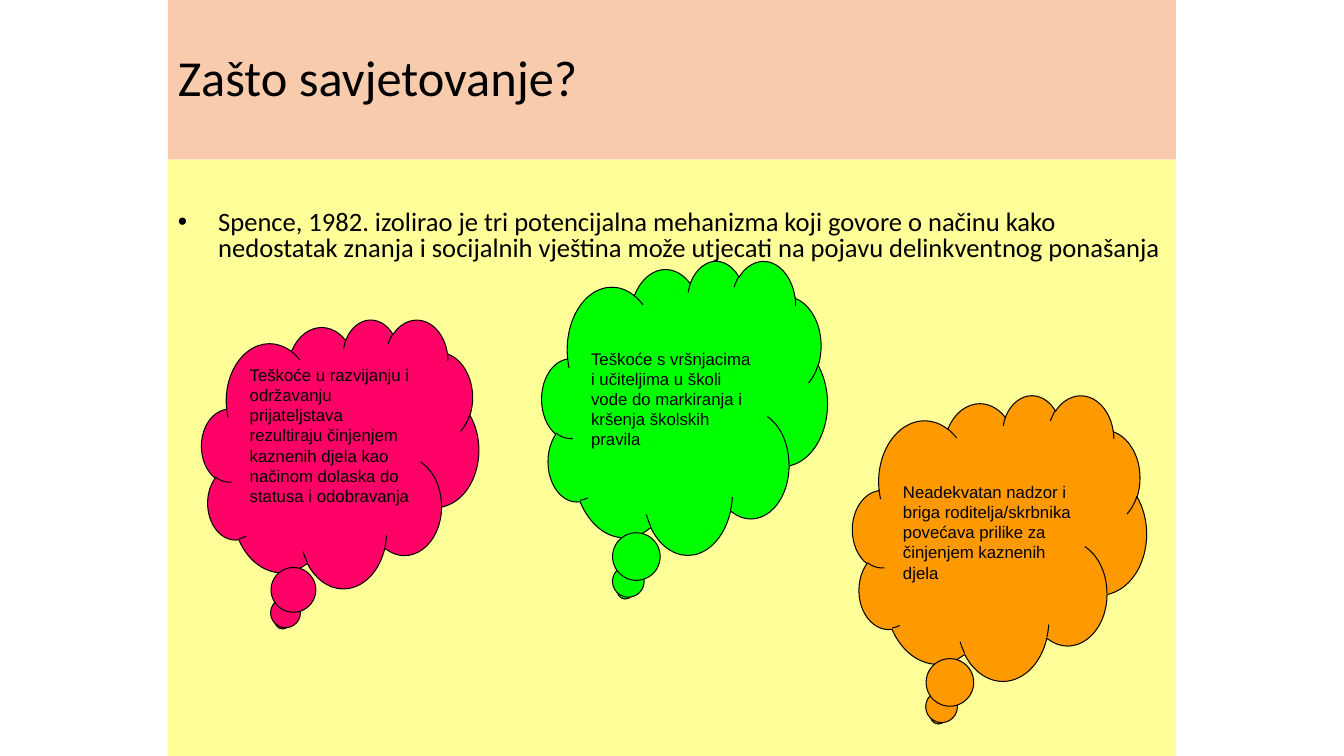
from pptx import Presentation
from pptx.dml.color import RGBColor
from pptx.enum.shapes import MSO_SHAPE as Shape
from pptx.enum.text import MSO_ANCHOR as Anchor, PP_ALIGN as Align
from pptx.oxml.ns import qn
from pptx.util import Pt

BLACK = RGBColor(0x00, 0x00, 0x00)
PEACH = RGBColor(0xF8, 0xCB, 0xAD)
YELLOW = RGBColor(0xFF, 0xFF, 0x99)
PINK = RGBColor(0xFF, 0x00, 0x66)
GREEN = RGBColor(0x00, 0xFF, 0x00)
ORANGE = RGBColor(0xFF, 0x99, 0x00)

PANEL_LEFT, PANEL_WIDTH = 120, 720
TITLE_HEIGHT, PAGE_HEIGHT = 114, 540

CLOUDS = [
    ((144, 228, 198, 192), PINK, 3.6,
     "Teškoće u razvijanju i održavanju prijateljstava rezultiraju činjenjem "
     "kaznenih djela kao načinom dolaska do statusa i odobravanja"),
    ((387, 186, 204, 210), GREEN, 31.2,
     "Teškoće s vršnjacima i učiteljima u školi vode do markiranja i kršenja "
     "školskih pravila"),
    ((609, 282, 210, 204), ORANGE, 31.2,
     "Neadekvatan nadzor i briga roditelja/skrbnika povećava prilike za "
     "činjenjem kaznenih djela"),
]


def add_filled(page, kind, box, color, text, font_name, size):
    shape = page.shapes.add_shape(kind, *map(Pt, box))
    shape.shadow.inherit = False
    shape.fill.solid()
    shape.fill.fore_color.rgb = color
    shape.line.fill.background()
    frame = shape.text_frame
    frame.word_wrap = True
    frame.vertical_anchor = Anchor.TOP
    frame.text = text
    para = frame.paragraphs[0]
    para.alignment = Align.LEFT
    font = para.runs[0].font
    font.name, font.size, font.color.rgb = font_name, Pt(size), BLACK
    return shape


def add_title(page, box):
    title = add_filled(page, Shape.RECTANGLE, box, PEACH, "Zašto savjetovanje?", "Calibri", 36)
    title.text_frame.vertical_anchor = Anchor.MIDDLE
    title.text_frame.paragraphs[0].line_spacing = 0.9


def add_body(page, box):
    body = add_filled(
        page, Shape.RECTANGLE, box, YELLOW,
        "Spence, 1982. izolirao je tri potencijalna mehanizma koji govore o načinu kako "
        "nedostatak znanja i socijalnih vještina može utjecati na pojavu delinkventnog ponašanja",
        "Calibri", 19)
    body.text_frame.margin_top = Pt(37)
    para = body.text_frame.paragraphs[0]
    para.line_spacing = 0.8
    properties = para._p.get_or_add_pPr()
    properties.set("marL", str(Pt(28.8)))
    properties.set("indent", str(-Pt(28.8)))
    for tag, name, value in (("a:buFont", "typeface", "Arial"), ("a:buChar", "char", "•")):
        bullet = properties.makeelement(qn(tag), {name: value})
        properties.append(bullet)


def add_cloud(page, box, color, top_margin, text):
    cloud = add_filled(page, Shape.CLOUD_CALLOUT, box, color, text, "Arial", 12)
    cloud.adjustments[0] = -0.208
    cloud.adjustments[1] = 0.625
    cloud.line.color.rgb = BLACK
    cloud.line.width = Pt(0.75)
    cloud.text_frame.margin_top = Pt(top_margin)


def main():
    deck = Presentation()
    deck.slide_width, deck.slide_height = Pt(960), Pt(PAGE_HEIGHT)
    page = deck.slides.add_slide(deck.slide_layouts[6])
    add_title(page, (PANEL_LEFT, 0, PANEL_WIDTH, TITLE_HEIGHT))
    add_body(page, (PANEL_LEFT, TITLE_HEIGHT, PANEL_WIDTH, PAGE_HEIGHT - TITLE_HEIGHT))
    for cloud in CLOUDS:
        add_cloud(page, *cloud)
    deck.save("out.pptx")


if __name__ == "__main__":
    main()
